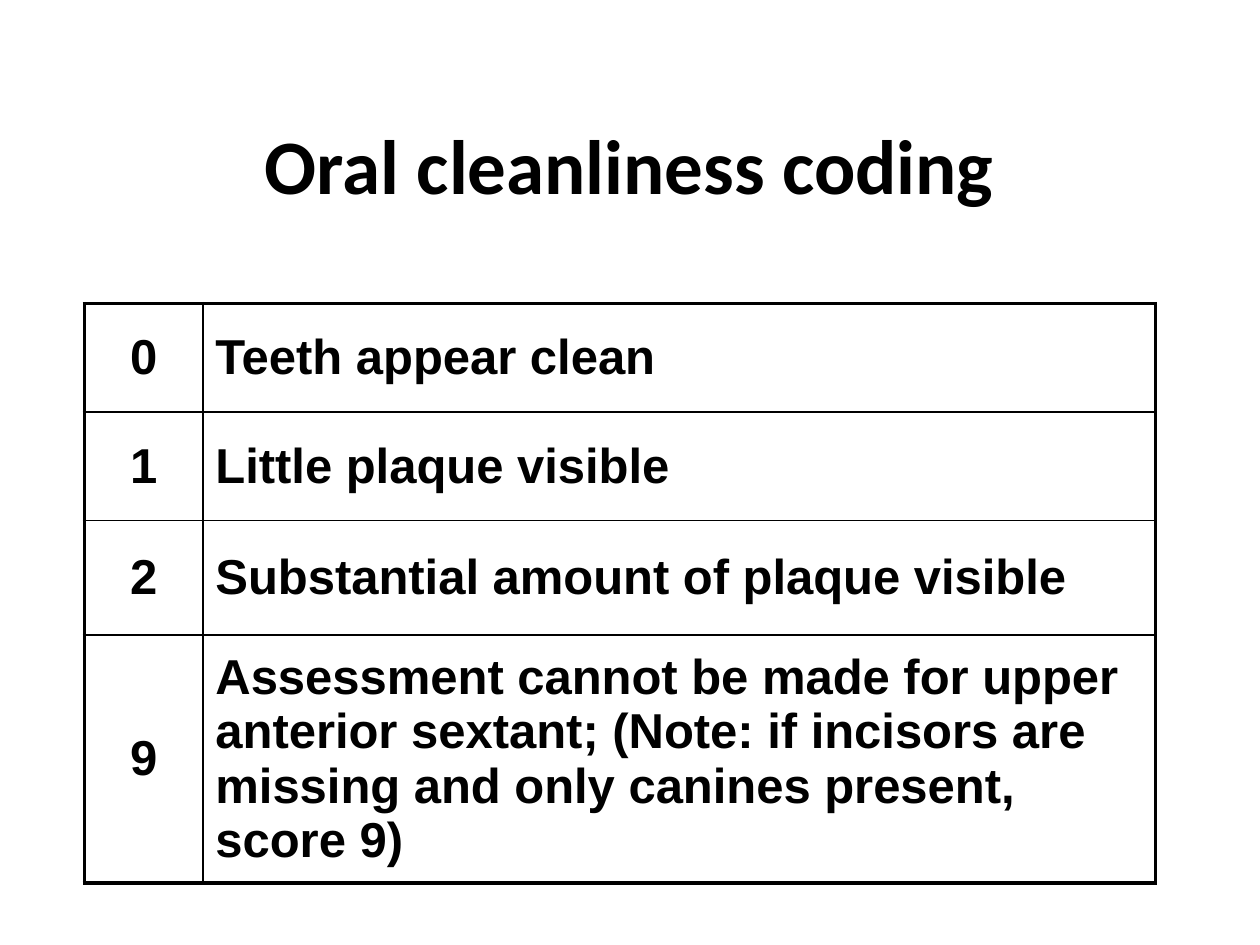
from dataclasses import dataclass

from lxml.etree import SubElement
from pptx import Presentation
from pptx.dml.color import RGBColor
from pptx.enum.text import MSO_ANCHOR as Anchor, PP_ALIGN as Align
from pptx.oxml.ns import qn
from pptx.util import Inches, Pt


@dataclass(frozen=True)
class Theme:
    ink: str = "000000"
    title_font: str = "Calibri"
    table_font: str = "Arial"
    title_size: int = 44
    table_size: int = 28
    outer_line: float = 2.25
    inner_line: float = 1


class SlideBuilder:
    def __init__(self, slide, theme):
        self.slide = slide
        self.theme = theme

    def format_text(self, frame, font_name, size, align):
        for paragraph in frame.paragraphs:
            paragraph.alignment = align
            for run in paragraph.runs:
                run.font.name = font_name
                run.font.size = Pt(size)
                run.font.bold = True
                run.font.color.rgb = RGBColor.from_string(self.theme.ink)

    def title(self, wording, left, top, width, height):
        heading = self.slide.shapes.add_textbox(
            Inches(left), Inches(top), Inches(width), Inches(height))
        frame = heading.text_frame
        frame.word_wrap = True
        frame.vertical_anchor = Anchor.MIDDLE
        frame.text = wording
        self.format_text(frame, self.theme.title_font,
                         self.theme.title_size, Align.CENTER)

    def borders(self, cell, outer_sides):
        """Draw all four sides, heavier where the cell meets the table's edge."""
        properties = cell._tc.get_or_add_tcPr()
        for position, (side, is_outer) in enumerate(outer_sides.items()):
            weight = self.theme.outer_line if is_outer else self.theme.inner_line
            line = SubElement(properties, qn(f"a:ln{side}"), w=str(Pt(weight)))
            fill = SubElement(line, qn("a:solidFill"))
            SubElement(fill, qn("a:srgbClr"), val=self.theme.ink)
            properties.insert(position, line)

    def table(self, rows, left, top, column_widths, row_heights):
        grid = self.slide.shapes.add_table(
            len(rows), len(column_widths), Inches(left), Inches(top),
            Inches(sum(column_widths)), Inches(sum(row_heights))).table
        grid.first_row = grid.horz_banding = False
        for column, width in zip(grid.columns, column_widths):
            column.width = Inches(width)
        for row, height in zip(grid.rows, row_heights):
            row.height = Inches(height)

        last_row, last_column = len(rows) - 1, len(column_widths) - 1
        for r, entries in enumerate(rows):
            for c, wording in enumerate(entries):
                cell = grid.cell(r, c)
                cell.text_frame.text = wording
                cell.vertical_anchor = Anchor.MIDDLE
                cell.fill.background()
                self.format_text(cell.text_frame, self.theme.table_font,
                                 self.theme.table_size,
                                 Align.CENTER if c == 0 else Align.LEFT)
                self.borders(cell, {"L": c == 0, "R": c == last_column,
                                    "T": r == 0, "B": r == last_row})


CODES = [
    ("0", "Teeth appear clean"),
    ("1", "Little plaque visible"),
    ("2", "Substantial amount of plaque visible"),
    ("9", "Assessment cannot be made for upper anterior sextant; "
          "(Note: if incisors are missing and only canines present, score 9)"),
]


def main():
    deck = Presentation()
    deck.slide_width, deck.slide_height = Inches(10), Inches(7.5)
    builder = SlideBuilder(deck.slides.add_slide(deck.slide_layouts[6]), Theme())
    builder.title("Oral cleanliness coding", 0.75, 0.67, 8.5, 1.25)
    builder.table(CODES, 0.67, 2.41, column_widths=[0.94, 7.56],
                  row_heights=[0.86, 0.86, 0.91, 1.83])
    deck.save("out.pptx")


if __name__ == "__main__":
    main()
